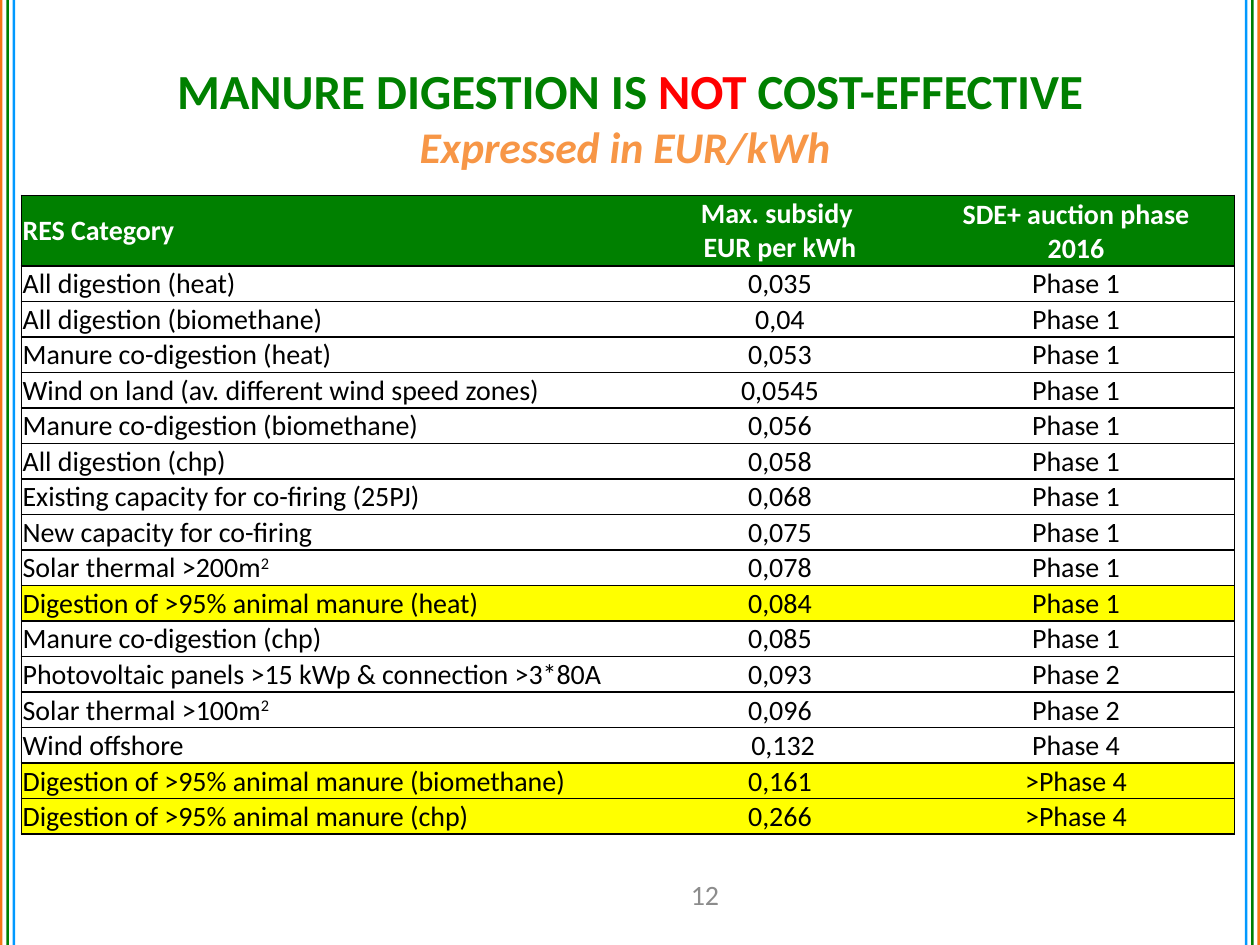
from lxml import etree
from pptx import Presentation
from pptx.dml.color import RGBColor
from pptx.enum import shapes, text
from pptx.oxml.ns import qn
from pptx.util import Inches, Pt

FONT = "Calibri"
GREEN = RGBColor(0x00, 0x80, 0x00)
RED = RGBColor(0xFF, 0x00, 0x00)
ORANGE = RGBColor(0xF7, 0x96, 0x46)
STRIPE_ORANGE = RGBColor(0xF6, 0x76, 0x16)
BLUE = RGBColor(0x00, 0x99, 0xFF)
GREY = RGBColor(0x8C, 0x8C, 0x8C)
YELLOW = RGBColor(0xFF, 0xFF, 0x00)
WHITE = RGBColor(0xFF, 0xFF, 0xFF)
BLACK = RGBColor(0x00, 0x00, 0x00)

SLIDE_WIDTH, SLIDE_HEIGHT = 10, 7.5
STRIPE_WIDTH, STRIPE_STEP = 0.02, 0.05
COLUMN_WIDTHS = (4.93, 2.18, 2.52)
HEADER_HEIGHT, ROW_HEIGHT = 0.56, 0.28

HEADER = ("RES Category", "Max. subsidy \nEUR per kWh", "SDE+ auction phase\n2016")
ROWS = (
    ("All digestion (heat)", "0,035", "Phase 1"),
    ("All digestion (biomethane)", "0,04", "Phase 1"),
    ("Manure co-digestion (heat)", "0,053", "Phase 1"),
    ("Wind on land (av. different wind speed zones)", "0,0545", "Phase 1"),
    ("Manure co-digestion (biomethane)", "0,056", "Phase 1"),
    ("All digestion (chp)", "0,058", "Phase 1"),
    ("Existing capacity for co-firing (25PJ)", "0,068", "Phase 1"),
    ("New capacity for co-firing", "0,075", "Phase 1"),
    ("Solar thermal >200m^2", "0,078", "Phase 1"),
    ("Digestion of >95% animal manure (heat)", "0,084", "Phase 1"),
    ("Manure co-digestion (chp)", "0,085", "Phase 1"),
    ("Photovoltaic panels >15 kWp & connection >3*80A", "0,093", "Phase 2"),
    ("Solar thermal >100m^2", "0,096", "Phase 2"),
    ("Wind offshore", " 0,132", "Phase 4"),
    ("Digestion of >95% animal manure (biomethane)", "0,161", ">Phase 4"),
    ("Digestion of >95% animal manure (chp)", "0,266", ">Phase 4"),
)


def add_run(paragraph, wording, size, color, bold=False, italic=False):
    run = paragraph.add_run()
    run.text = wording
    font = run.font
    font.name, font.size, font.bold, font.italic = FONT, Pt(size), bold, italic
    font.color.rgb = color
    return run


def add_stripe(slide, left, color):
    stripe = slide.shapes.add_shape(
        shapes.MSO_SHAPE.RECTANGLE, Inches(left), 0, Inches(STRIPE_WIDTH), Inches(SLIDE_HEIGHT))
    stripe.shadow.inherit = False
    stripe.fill.solid()
    stripe.fill.fore_color.rgb = color
    stripe.line.fill.background()


def add_side_stripes(slide):
    """Mirror the three stripes on the left and right edges."""
    for index, color in enumerate((STRIPE_ORANGE, GREEN, BLUE)):
        offset = index * STRIPE_STEP
        add_stripe(slide, offset, color)
        add_stripe(slide, SLIDE_WIDTH - STRIPE_WIDTH - offset, color)


def fill_title(slide):
    title = slide.shapes.title
    title.left, title.top = Inches(0.5), Inches(0.3)
    title.width, title.height = Inches(9), Inches(1.25)
    title.text_frame.vertical_anchor = text.MSO_ANCHOR.MIDDLE
    paragraph = title.text_frame.paragraphs[0]
    paragraph.alignment = text.PP_ALIGN.CENTER
    add_run(paragraph, "MANURE DIGESTION IS ", 28, GREEN, bold=True)
    add_run(paragraph, "NOT", 28, RED, bold=True)
    add_run(paragraph, " COST-EFFECTIVE", 28, GREEN, bold=True)
    paragraph.add_line_break()
    add_run(paragraph, "Expressed in EUR/kWh ", 25, ORANGE, bold=True, italic=True)


def add_page_number(slide):
    box = slide.shapes.add_textbox(Inches(5.16), Inches(6.9), Inches(0.87), Inches(0.4))
    frame = box.text_frame
    frame.word_wrap = True
    frame.vertical_anchor = text.MSO_ANCHOR.MIDDLE
    paragraph = frame.paragraphs[0]
    paragraph.alignment = text.PP_ALIGN.CENTER
    add_run(paragraph, "12", 16, GREY)


def set_borders(cell, sides):
    """Draw thin black lines on the given sides (L, R, T, B) and none on the others."""
    properties = cell._tc.get_or_add_tcPr()
    for side in "LRTB":
        line = etree.SubElement(properties, qn(f"a:ln{side}"), w=str(Pt(1)))
        if side in sides:
            fill = etree.SubElement(line, qn("a:solidFill"))
            etree.SubElement(fill, qn("a:srgbClr"), val=str(BLACK))
        else:
            etree.SubElement(line, qn("a:noFill"))


def fill_cell(cell, wording, column, color, background, bold):
    """Write one paragraph per line; what follows a caret is superscript."""
    cell.margin_left = cell.margin_top = cell.margin_right = Inches(0.01)
    cell.margin_bottom = 0
    is_last = column == len(COLUMN_WIDTHS) - 1
    cell.vertical_anchor = text.MSO_ANCHOR.BOTTOM if is_last else text.MSO_ANCHOR.MIDDLE
    set_borders(cell, ("LTB", "TB", "RTB")[column])
    cell.fill.solid()
    cell.fill.fore_color.rgb = background
    frame = cell.text_frame
    for index, line in enumerate(wording.split("\n")):
        paragraph = frame.add_paragraph() if index else frame.paragraphs[0]
        paragraph.alignment = text.PP_ALIGN.CENTER if column else text.PP_ALIGN.JUSTIFY
        base, _, superscript = line.partition("^")
        add_run(paragraph, base, 16, color, bold)
        if superscript:
            run = add_run(paragraph, superscript, 16, color, bold)
            run._r.get_or_add_rPr().set("baseline", "30000")


def add_subsidy_table(slide):
    height = HEADER_HEIGHT + ROW_HEIGHT * len(ROWS)
    table = slide.shapes.add_table(
        len(ROWS) + 1, len(COLUMN_WIDTHS), Inches(0.17), Inches(1.55),
        Inches(sum(COLUMN_WIDTHS)), Inches(height)).table
    table.horz_banding = False
    for column, width in zip(table.columns, COLUMN_WIDTHS):
        column.width = Inches(width)
    for index, values in enumerate((HEADER, *ROWS)):
        is_header = index == 0
        table.rows[index].height = Inches(HEADER_HEIGHT if is_header else ROW_HEIGHT)
        color = WHITE if is_header else BLACK
        highlighted = values[0].startswith("Digestion of >95%")
        background = GREEN if is_header else YELLOW if highlighted else WHITE
        for column, wording in enumerate(values):
            fill_cell(table.cell(index, column), wording, column, color, background, is_header)


def main():
    presentation = Presentation()
    presentation.slide_width = Inches(SLIDE_WIDTH)
    presentation.slide_height = Inches(SLIDE_HEIGHT)
    slide = presentation.slides.add_slide(presentation.slide_layouts[5])
    add_side_stripes(slide)
    fill_title(slide)
    add_subsidy_table(slide)
    add_page_number(slide)
    presentation.save("out.pptx")


if __name__ == "__main__":
    main()
